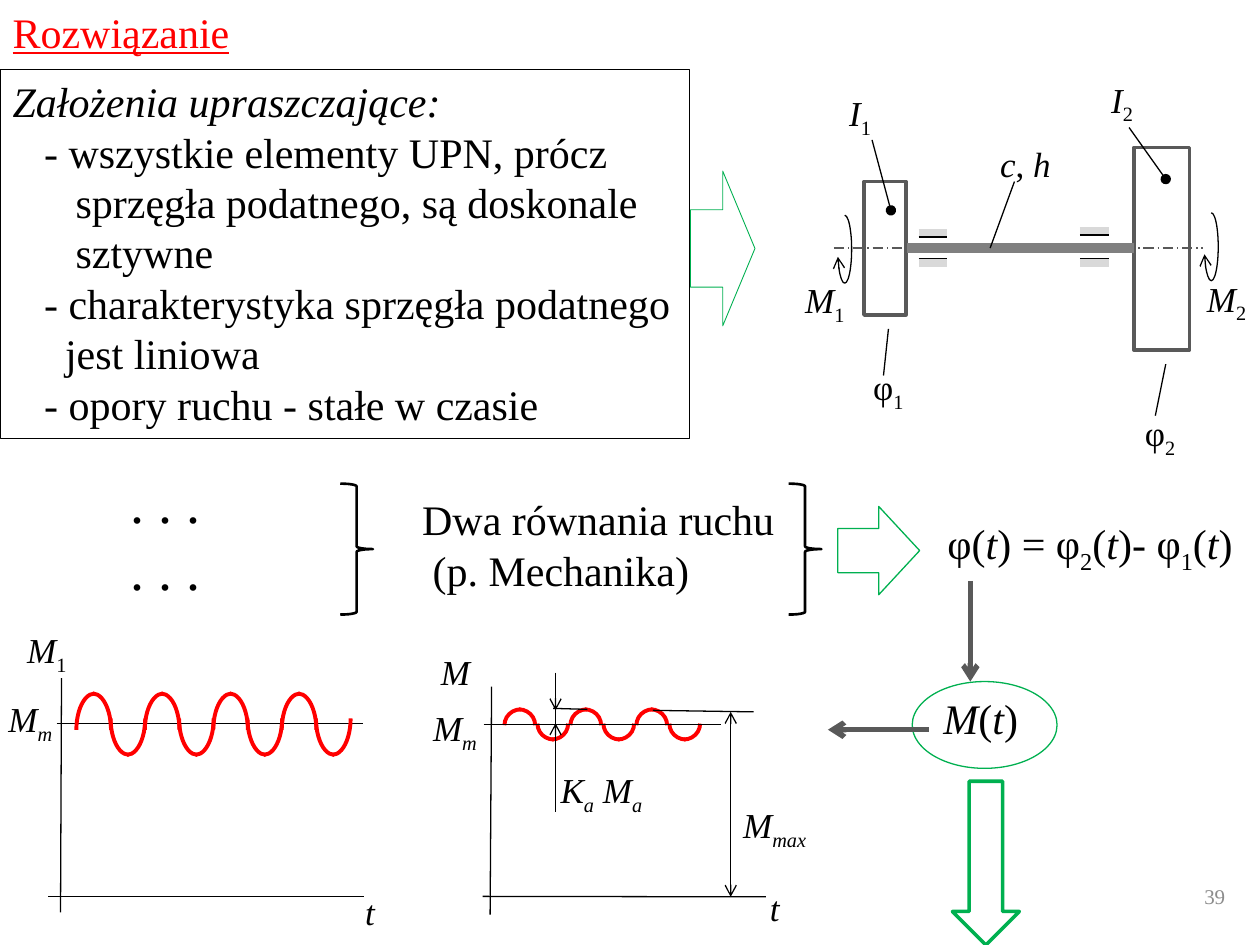
from lxml import etree
from pptx import Presentation
from pptx import util as u
from pptx.dml.color import RGBColor
from pptx.enum import dml, shapes, text
from pptx.oxml.ns import qn

COLORS = {"ink": "000000", "red": "FF0000", "green": "00B050", "steel": "595959",
          "shaft": "808080", "bearing": "D9D9D9", "number": "8C8C8C"}
MSO = shapes.MSO_SHAPE
M, T = ("M", "i"), ("t", "i")


class Sketch:
    """Style and current slide, with a method for each kind of element."""

    font = "Times New Roman"

    def __init__(self, slide):
        self.s = slide

    def rgb(self, name):
        return RGBColor.from_string(COLORS[name])

    def place(self, sp, x, y, w, h):
        sp.left, sp.top, sp.width, sp.height = (u.Cm(v) for v in (x, y, w, h))

    def style(self, r, size, color="ink", kind=""):
        f = r.font
        f.name, f.size, f.color.rgb = self.font, u.Pt(size), self.rgb(color)
        f.italic = "i" in kind
        f.underline = "u" in kind
        if "s" in kind:
            r._r.get_or_add_rPr().set("baseline", "-25000")

    def indent(self, p, points):
        pPr = p._p.get_or_add_pPr()
        pPr.set("marL", str(u.Pt(points)))
        pPr.set("indent", "0")
        return pPr

    def title(self, words, box):
        sp = self.s.shapes.title
        self.place(sp, *box)
        tf = sp.text_frame
        tf.text, tf.auto_size = words, text.MSO_AUTO_SIZE.NONE
        p = tf.paragraphs[0]
        p.alignment = text.PP_ALIGN.LEFT
        self.style(p.runs[0], 24, "red", "u")

    def body(self, rows, box):
        sp = self.s.placeholders[1]
        self.place(sp, *box)
        self.outline(sp.line, "ink", 0.5)
        tf = sp.text_frame
        tf.text = "\n".join(words for words, _, _ in rows)
        tf.auto_size = text.MSO_AUTO_SIZE.NONE
        for p, (_, points, kind) in zip(tf.paragraphs, rows):
            p.space_before = u.Pt(0)
            etree.SubElement(self.indent(p, points), qn("a:buNone"))
            self.style(p.runs[0], 24, kind=kind)

    def label(self, x, y, w, *rows, size=20, h=1.12, color="ink"):
        tf = self.s.shapes.add_textbox(*(u.Cm(v) for v in (x, y, w, h))).text_frame
        tf.word_wrap = True
        for i, row in enumerate(rows):
            p = tf.add_paragraph() if i else tf.paragraphs[0]
            for words, kind in row:
                r = p.add_run()
                r.text = words
                self.style(r, size, color, kind)
        return tf

    def outline(self, line, color, width):
        line.color.rgb, line.width = self.rgb(color), u.Pt(width)

    def shape(self, kind, box, color, width, adjust=(), flip=""):
        sp = self.s.shapes.add_shape(kind, *(u.Cm(v) for v in box))
        sp.shadow.inherit = False
        sp.fill.background()
        self.outline(sp.line, color, width)
        for i, value in enumerate(adjust):
            sp.adjustments[i] = value
        for axis in flip:
            sp._element.spPr.find(qn("a:xfrm")).set("flip" + axis, "1")
        return sp

    def ends(self, sp, head=None, tail=None):
        ln = sp.line._get_or_add_ln()
        for tag, kind in (("a:headEnd", head), ("a:tailEnd", tail)):
            if kind:
                etree.SubElement(ln, qn(tag)).set("type", kind)

    def line(self, x1, y1, x2, y2, color="ink", width=0.75, head=None, tail=None, dash=None):
        sp = self.s.shapes.add_connector(shapes.MSO_CONNECTOR.STRAIGHT,
                                         *(u.Cm(v) for v in (x1, y1, x2, y2)))
        self.outline(sp.line, color, width)
        if dash:
            sp.line.dash_style = dash
        self.ends(sp, head, tail)
        etree.SubElement(sp._element.spPr, qn("a:effectLst"))

    def wave(self, x, y, w, h, period, drop, count):
        for i in range(count):
            for k, flip in enumerate(("", "H", "V", "HV")):
                left = x + period * (i + k // 2 / 2) + 0.04 * (k % 2)
                self.shape(MSO.ARC, (left, y + drop * (k // 2), w, h), "red", 2.25, flip=flip)


def draw_shaft(d):
    """Draw the two-disc shaft model."""
    d.shape(MSO.RECTANGLE, (17.42, 3.66, 0.84, 2.69), "steel", 2.25)
    d.shape(MSO.RECTANGLE, (22.86, 2.97, 1.12, 4.09), "steel", 2)
    d.line(16.81, 5, 24.26, 5, "steel", dash=dml.MSO_LINE.LONG_DASH_DOT)
    d.line(18.29, 5, 22.86, 5, "shaft", 6)
    for x, top in ((18.52, 4.7), (21.77, 4.66)):
        for y in (top, 5.3):
            d.line(x, y, x + 0.58, y, "bearing", 4.5)
        for y in (top + 0.08, 5.21):
            d.line(x, y, x + 0.58, y)
    for x, y in ((16.89, 4.34), (24.28, 4.29)):
        d.ends(d.shape(MSO.ARC, (x, y, 0.28, 1.37), "ink", 0.75, (162, 79.2)), tail="arrow")
    d.line(17.58, 2.82, 17.96, 4.24, tail="oval")
    d.line(22.76, 2.57, 23.5, 3.61, tail="oval")
    d.line(20.45, 3.66, 19.96, 5)
    d.line(17.91, 6.63, 17.81, 7.57)
    d.line(23.5, 7.34, 23.29, 8.38)
    for x, y, w, name, kind, index in (
            (15.98, 5.49, 1.4, "M", "i", "1"), (24.08, 5.46, 1.45, "M", "i", "2"),
            (16.87, 1.73, 1.45, "I", "i", "1"), (22.15, 1.45, 1.24, "I", "i", "2"),
            (17.35, 7.24, 1.52, "φ", "", "1"), (22.83, 8.18, 1.35, "φ", "", "2")):
        d.label(x, y, w, [(name, kind), (index, "s")])
    d.label(19.91, 2.74, 2.54, [("c", "i"), (", ", ""), ("h", "i")])


def draw_equations(d):
    """Draw the row from the equations of motion to the moment."""
    dots = [(". . .", "")]
    d.label(2.39, 9.3, 2.24, dots, dots, size=32, h=3)
    tf = d.label(8.26, 9.83, 7.87, [("Dwa równania ruchu", "")],
                 [("(p. Mechanika)", "")], size=24, h=2.31)
    d.indent(tf.paragraphs[1], 6)
    for x in (6.86, 15.9):
        d.shape(MSO.RIGHT_BRACE, (x, 9.75, 0.66, 2.64), "ink", 1.5)
    d.shape(MSO.RIGHT_ARROW, (13.92, 3.45, 1.3, 3.12), "green", 0.5)
    d.shape(MSO.RIGHT_ARROW, (16.89, 10.21, 1.65, 1.78), "green", 0.75)
    d.label(18.85, 10.31, 6.55,
            [("φ(", ""), T, (") = φ", ""), ("2", "s"), ("(", ""), T,
             (")- φ", ""), ("1", "s"), ("(", ""), T, (")", "")], size=24, h=1.27)
    d.line(19.56, 11.71, 19.56, 13.74, "steel", 3, tail="arrow")
    d.label(18.77, 13.84, 2.62, [M, ("(", ""), T, (")", "")], size=24, h=1.27)
    d.shape(MSO.OVAL, (18.39, 13.74, 2.92, 1.75), "green", 0.75)
    d.line(18.72, 14.71, 16.69, 14.71, "steel", 3, tail="arrow")
    d.shape(MSO.DOWN_ARROW, (19.2, 15.75, 1.35, 3.3), "green", 2)


def draw_input_graph(d):
    """Draw the driving moment over time."""
    d.line(1.24, 13.67, 1.22, 18.39)
    d.line(0.97, 18.08, 7.34, 18.08)
    d.line(1.14, 14.58, 7.32, 14.58, width=0.5)
    d.wave(1.5, 13.98, 0.74, 1.47, 1.38, -0.23, 4)
    d.label(0.3, 12.55, 1.78, [M, ("1", "s")])
    d.label(7.11, 17.83, 0.97, [T])
    d.label(-0.08, 13.94, 1.68, [M, ("m", "is")])


def draw_output_graph(d):
    """Draw the coupling moment over time with its dimensions."""
    d.wave(10.13, 14.3, 0.66, 0.64, 1.33, -0.03, 3)
    d.line(9.91, 13.84, 9.88, 18.44)
    d.line(9.73, 18.07, 15.44, 18.08)
    d.line(9.75, 14.6, 14.53, 14.6)
    d.line(11.84, 14.3, 11.15, 14.28)
    d.line(11.2, 13.56, 11.2, 14.32, tail="arrow")
    d.line(11.2, 14.28, 11.2, 14.6)
    d.line(11.2, 16.36, 11.2, 14.58, tail="arrow")
    d.line(13.16, 14.32, 15.19, 14.35)
    d.line(14.73, 14.35, 14.73, 18.08, head="arrow", tail="arrow")
    d.label(8.64, 12.98, 1.57, [M])
    d.label(15.27, 17.75, 0.97, [T])
    d.label(8.48, 14.12, 1.68, [M, ("m", "is")])
    d.label(11.05, 15.37, 3.05, [("K", "i"), ("a", "is"), (" M", "i"), ("a", "is")])
    d.label(14.73, 16.08, 2.13, [M, ("max", "is")])


def main():
    """Build the slide and save it."""
    prs = Presentation()
    prs.slide_width, prs.slide_height = u.Cm(25.4), u.Cm(19.05)
    d = Sketch(prs.slides.add_slide(prs.slide_layouts[1]))
    d.title("Rozwiązanie", (0, 0, 5.77, 1.27))
    d.body([("Założenia upraszczające:", 0, "i"),
            ("- wszystkie elementy UPN, prócz", 18, ""),
            ("sprzęgła podatnego, są doskonale", 36, ""),
            ("sztywne", 36, ""),
            ("- charakterystyka sprzęgła podatnego", 18, ""),
            ("jest liniowa", 30, ""),
            ("- opory ruchu - stałe w czasie", 18, "")], (0, 1.4, 13.89, 7.44))
    draw_shaft(d)
    draw_equations(d)
    draw_input_graph(d)
    draw_output_graph(d)
    tf = d.label(23.83, 17.55, 1.12, [("39", "")], size=12, h=1.02, color="number")
    tf.vertical_anchor = text.MSO_ANCHOR.MIDDLE
    tf.paragraphs[0].alignment = text.PP_ALIGN.RIGHT
    prs.save("out.pptx")


if __name__ == "__main__":
    main()
